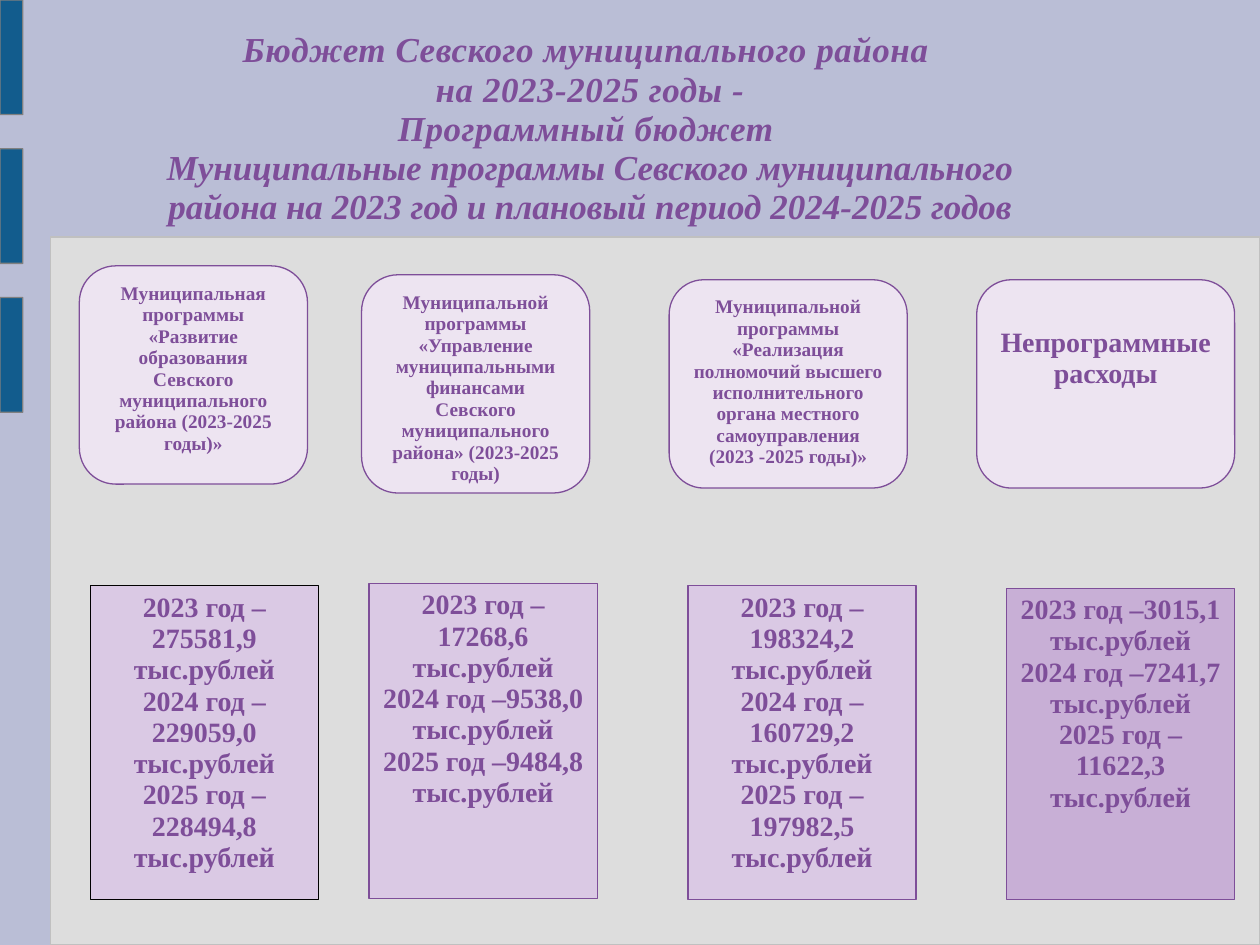
from pptx import Presentation
from pptx.dml.color import RGBColor
from pptx.enum import shapes, text
from pptx.util import Cm, Pt

COLORS = {
    "background": "BABED6", "panel": "DDDDDD", "panel_line": "C0C0C0",
    "tab": "125C8D", "tab_line": "808080", "program": "EDE4F1",
    "amount": "DAC9E4", "other_amount": "C8AFD6", "violet": "7E4E99",
    "black": "000000",
}

TITLE = [
    ("Бюджет Севского муниципального района ", 30),
    ("на 2023-2025 годы -\vПрограммный бюджет ", 30),
    ("Муниципальные программы Севского муниципального района "
     "на 2023 год и плановый период 2024-2025 годов", 0),
]

PROGRAMS = [
    ((1.6, 5.36, 4.6, 4.4), 11, 0.13,
     "Муниципальная программы «Развитие образования Севского "
     "муниципального района (2023-2025 годы)»"),
    ((7.29, 5.54, 4.6, 4.4), 11, 0.13,
     "Муниципальной программы «Управление муниципальными финансами "
     "Севского муниципального района» (2023-2025 годы)"),
    ((13.49, 5.64, 4.8, 4.2), 11, 0.13,
     "Муниципальной программы «Реализация полномочий высшего "
     "исполнительного органа местного самоуправления (2023 -2025 годы)»"),
    ((19.69, 5.64, 5.2, 4.2), 16, 0.76, "Непрограммные расходы"),
]

AMOUNTS = [
    ((1.82, 11.81, 4.6, 6.32), "amount", "black",
     ["2023 год –275581,9", "тыс.рублей", "2024 год –229059,0",
      "тыс.рублей", "2025 год –228494,8", "тыс.рублей"]),
    ((7.44, 11.76, 4.6, 6.36), "amount", "violet",
     ["2023 год –17268,6", "тыс.рублей", "2024 год –9538,0 тыс.рублей",
      "2025 год –9484,8", "тыс.рублей"]),
    ((13.87, 11.81, 4.6, 6.32), "amount", "violet",
     ["2023 год –198324,2", "тыс.рублей", "2024 год –160729,2",
      "тыс.рублей", "2025 год –197982,5", "тыс.рублей"]),
    ((20.29, 11.86, 4.6, 6.27), "other_amount", "violet",
     ["2023 год –3015,1 тыс.рублей", "2024 год –7241,7 тыс.рублей",
      "2025 год –11622,3", "тыс.рублей"]),
]


class SlideBuilder:
    font = {"name": "Times New Roman", "bold": True}
    paragraph = {"alignment": text.PP_ALIGN.CENTER, "line_spacing": 0.93}
    frame = {
        "word_wrap": True, "vertical_anchor": text.MSO_ANCHOR.TOP,
        "margin_left": Cm(0.25), "margin_right": Cm(0.25),
        "margin_top": Cm(0.13), "margin_bottom": Cm(0.13),
    }

    def __init__(self, page):
        self.page = page
        self.paint(page.background.fill, "background")

    def paint(self, fill, color):
        fill.solid()
        fill.fore_color.rgb = RGBColor.from_string(COLORS[color])

    def apply(self, target, values):
        for name, value in values.items():
            setattr(target, name, value)

    def shape(self, place, fill, line, kind="RECTANGLE", corner=None):
        box = self.page.shapes.add_shape(
            getattr(shapes.MSO_SHAPE, kind), *map(Cm, place))
        box.shadow.inherit = False
        self.paint(box.fill, fill)
        self.paint(box.line.fill, line)
        box.line.width = Pt(0.75)
        if corner is not None:
            box.adjustments[0] = corner
        return box

    def lettering(self, box, lines, size, italic=False, top=0.13):
        frame = box.text_frame
        self.apply(frame, self.frame | {"margin_top": Cm(top)})
        for index, (wording, spacing) in enumerate(lines):
            para = frame.add_paragraph() if index else frame.paragraphs[0]
            para.text = wording
            self.apply(para, self.paragraph)
            for span in para.runs:
                self.apply(span.font, self.font | {"size": Pt(size), "italic": italic})
                span.font.color.rgb = RGBColor.from_string(COLORS["violet"])
                if spacing:
                    span._r.get_or_add_rPr().set("spc", str(spacing))

    def title(self, place, lines):
        box = self.page.shapes.add_textbox(*map(Cm, place))
        self.lettering(box, lines, 20, italic=True)

    def program(self, place, size, top, wording):
        box = self.shape(place, "program", "violet", "ROUNDED_RECTANGLE")
        self.lettering(box, [(wording, 0)], size, top=top)

    def amount(self, place, fill, line, lines):
        box = self.shape(place, fill, line)
        self.lettering(box, [(wording, 0) for wording in lines], 16)


def main():
    deck = Presentation()
    deck.slide_width, deck.slide_height = Cm(25.4), Cm(19.05)
    builder = SlideBuilder(deck.slides.add_slide(deck.slide_layouts[6]))
    builder.shape((1.02, 4.78, 24.38, 14.27), "panel", "panel_line",
                  "ROUNDED_RECTANGLE", 0)
    for row in range(3):
        builder.shape((0, 3 * row, 0.46, 2.31), "tab", "tab_line",
                      "ROUNDED_RECTANGLE", 0.01)
    for program in PROGRAMS:
        builder.program(*program)
    for amount in AMOUNTS:
        builder.amount(*amount)
    builder.title((2.31, 0.51, 19.18, 5.66), TITLE)
    deck.save("out.pptx")


if __name__ == "__main__":
    main()
